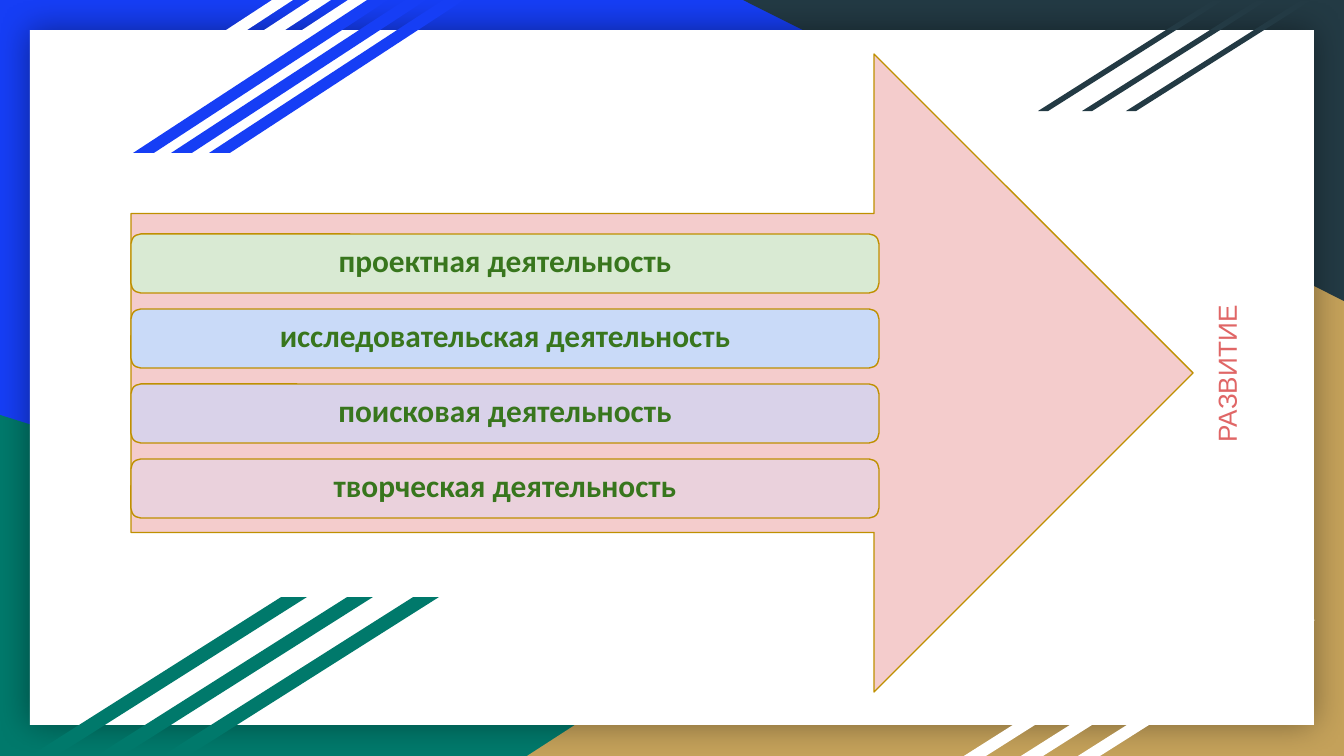
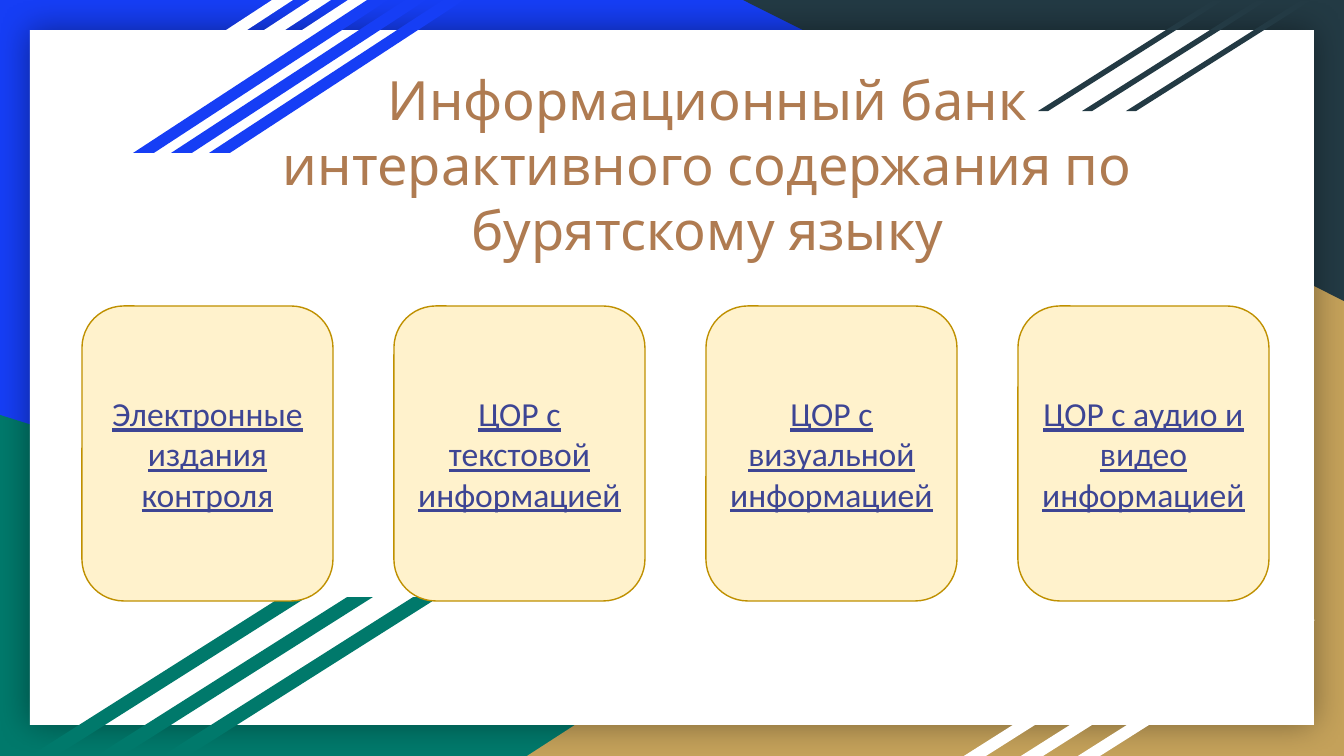
from lxml import etree
from pptx import Presentation
from pptx.dml import color
from pptx.enum import shapes, text
from pptx.oxml import ns
from pptx.util import Pt

PX = 914400 / 134.4
BLUE, GREEN, TAN, DARK, WHITE = "163EF5", "00796B", "C4A15A", "233A44", "FFFFFF"
EDGE = "BF9000"
KIND = shapes.MSO_SHAPE
hue = color.RGBColor.from_string


def draw(page, kind, box, fill, line=None):
    shape = page.shapes.add_shape(kind, *[round(v * PX) for v in box])
    shape.shadow.inherit = False
    shape.fill.solid()
    shape.fill.fore_color.rgb = hue(fill)
    if line:
        shape.line.color.rgb = hue(line)
        shape.line.width = Pt(0.75)
    else:
        shape.line.fill.background()
    return shape


def write(frame, words, size, face, ink, inset=13):
    frame.word_wrap = True
    frame.auto_size = text.MSO_AUTO_SIZE.NONE
    frame.vertical_anchor = text.MSO_ANCHOR.MIDDLE
    frame.margin_left = frame.margin_right = round(inset * PX)
    frame.margin_top = frame.margin_bottom = round(inset * PX)
    frame.text = words
    par = frame.paragraphs[0]
    par.alignment = text.PP_ALIGN.CENTER
    par.font.size = Pt(size)
    par.font.name = face
    par.font.color.rgb = hue(ink)
    return par


deck = Presentation()
deck.slide_width, deck.slide_height = round(1344 * PX), round(756 * PX)
master = deck.slide_master
master.background.fill.solid()
master.background.fill.fore_color.rgb = hue(BLUE)
first = deck.slides.add_slide(deck.slide_layouts[6])

# Corner triangles
draw(first, KIND.RIGHT_TRIANGLE, (0, 415, 1083, 341), GREEN)
corner = draw(first, KIND.RIGHT_TRIANGLE, (527, 228, 817, 528), TAN)
corner.element.spPr.xfrm.set("flipH", "1")
draw(first, KIND.RIGHT_TRIANGLE, (743, 0, 601, 301), DARK).rotation = 180

# White sheet with a soft shadow
sheet = draw(first, KIND.RECTANGLE, (30, 30, 1284, 695), WHITE)
glow = etree.SubElement(sheet.element.spPr.find(ns.qn("a:effectLst")),
                        ns.qn("a:outerShdw"), blurRad=str(Pt(18)), dist="0")
tone = etree.SubElement(glow, ns.qn("a:srgbClr"), val="000000")
etree.SubElement(tone, ns.qn("a:alpha"), val="40000")

# Slanted stripes, three to a group
for left, top, width, height, step, slant, fill in [
    (38, 0, 255, 153, 38, 1.53, WHITE),
    (133, 0, 255, 153, 38, 1.53, BLUE),
    (1038, 1, 184, 110, 44, 1.58, DARK),
    (964, 620, 237, 136, 57, 1.58, WHITE),
    (30, 597, 277, 159, 66, 1.58, GREEN),
]:
    for i in range(3):
        box = (left + i * step, top, width, height)
        draw(first, KIND.PARALLELOGRAM, box, fill).adjustments[0] = slant

# Move the shared decor to the master, behind its placeholders
for i, item in enumerate(list(first.shapes)):
    item.element.nvSpPr.cNvPr.set("id", str(100 + i))
    master.shapes.element.insert(2 + i, item.element)

# Slide 1: arrow with four activities
draw(first, KIND.RIGHT_ARROW, (131, 54, 1062, 638), "F4CCCC", EDGE)
for i, (words, fill) in enumerate([
    ("проектная деятельность", "D9EAD3"),
    ("исследовательская деятельность", "C9DAF8"),
    ("поисковая деятельность", "D9D2E9"),
    ("творческая деятельность", "EAD1DC"),
]):
    bar = draw(first, KIND.ROUNDED_RECTANGLE, (131, 234 + 75 * i, 748, 59), fill, EDGE)
    par = write(bar.text_frame, words, 16.8, "Calibri", "38761D")
    par.line_spacing = 0.8
    par.font.bold = True

goal = first.shapes.add_textbox(*[round(v * PX) for v in (926, 345, 601, 58)])
goal.rotation = 270
write(goal.text_frame, "РАЗВИТИЕ", 14, "Arial", "E06666", 7)

# Slide 2: title between the stripes and a row of four cards
second = deck.slides.add_slide(deck.slide_layouts[5])
title = second.shapes.title
title.left, title.top, title.width, title.height = [
    round(v * PX) for v in (212, 60, 991, 208)]
write(title.text_frame,
      "Информационный банк интерактивного содержания по бурятскому языку",
      29, "League Spartan", "AF7B51")

for i, words in enumerate([
    "Электронные издания контроля",
    "ЦОР с текстовой информацией",
    "ЦОР с визуальной информацией",
    "ЦОР с аудио и видео информацией",
]):
    card = draw(second, KIND.ROUNDED_RECTANGLE, (82 + 312 * i, 306, 251, 295),
                "FFF2CC", EDGE)
    write(card.text_frame, words, 18, "Calibri", "3D4594", 6).font.underline = True

deck.save("out.pptx")
